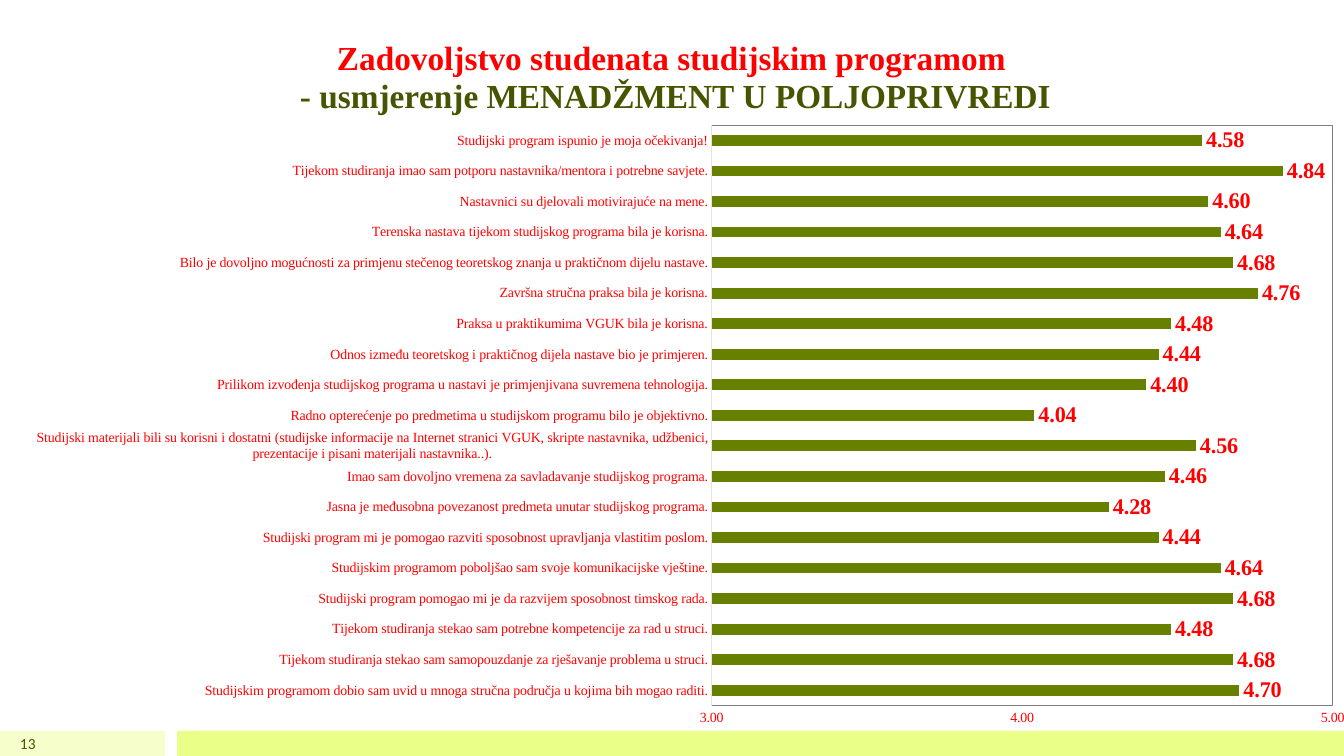
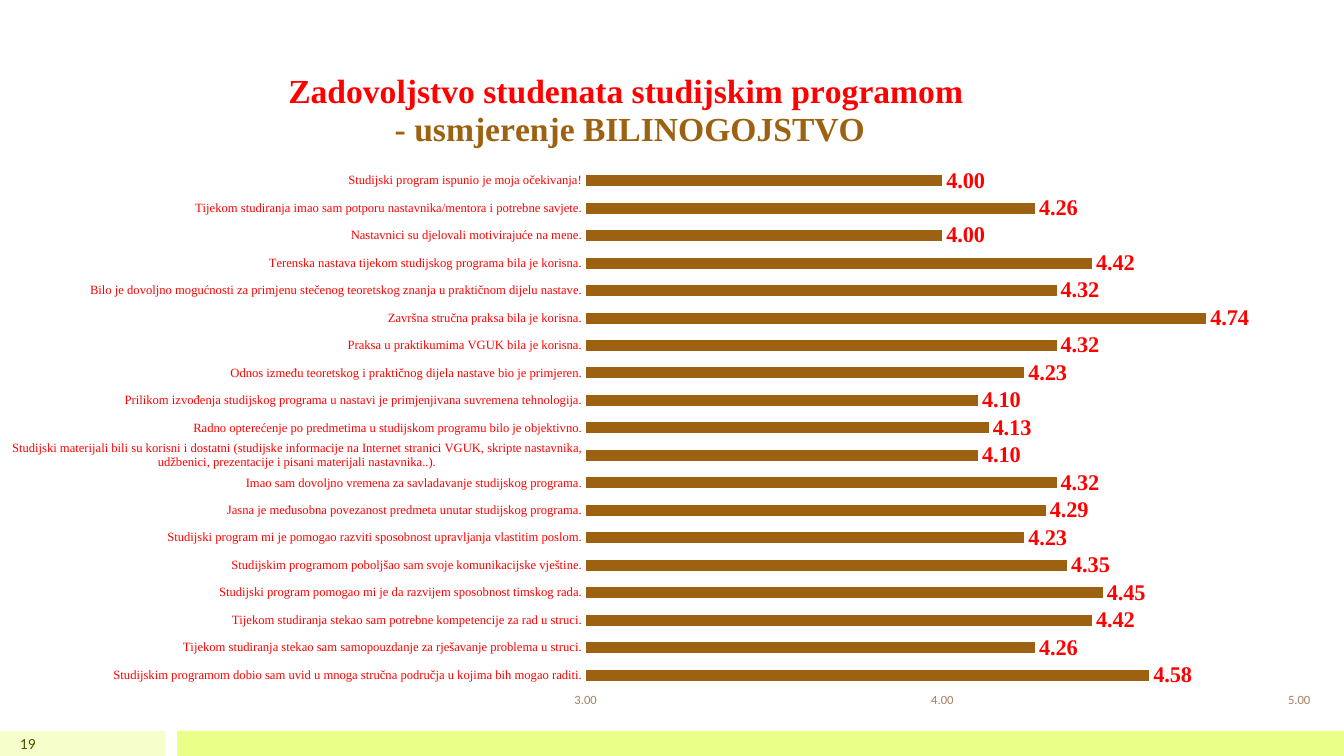
from lxml import etree
from pptx import Presentation
from pptx.chart.data import CategoryChartData
from pptx.dml.color import RGBColor
from pptx.enum.chart import XL_CHART_TYPE, XL_LABEL_POSITION, XL_TICK_MARK
from pptx.enum.shapes import MSO_SHAPE
from pptx.enum.text import MSO_ANCHOR, PP_ALIGN
from pptx.oxml import parse_xml
from pptx.oxml.ns import qn
from pptx.util import Pt

BAR = XL_CHART_TYPE.BAR_CLUSTERED
OUTSIDE_END = XL_LABEL_POSITION.OUTSIDE_END
NO_TICK = XL_TICK_MARK.NONE
RECT = MSO_SHAPE.RECTANGLE
MIDDLE, RIGHT = MSO_ANCHOR.MIDDLE, PP_ALIGN.RIGHT

# Shared look
SERIF, SANS = "Times New Roman", "Calibri"
RED, DARK_GREEN, OLIVE, BROWN = "FF0000", "455500", "688000", "9D6211"
PALE_LIME, LIME, GREY = "F6FFCC", "E9FF88", "808080"
FOOTER_TOP, FOOTER_HEIGHT = 522, 18
NAMESPACES = (
    'xmlns:c="http://schemas.openxmlformats.org/drawingml/2006/chart" '
    'xmlns:a="http://schemas.openxmlformats.org/drawingml/2006/main"'
)

# Survey statements, from the top of the chart down
STATEMENTS = [
    "Studijski program ispunio je moja očekivanja!",
    "Tijekom studiranja imao sam potporu nastavnika/mentora i potrebne savjete.",
    "Nastavnici su djelovali motivirajuće na mene.",
    "Terenska nastava tijekom studijskog programa bila je korisna.",
    "Bilo je dovoljno mogućnosti za primjenu stečenog teoretskog znanja u praktičnom dijelu nastave.",
    "Završna stručna praksa bila je korisna.",
    "Praksa u praktikumima VGUK bila je korisna.",
    "Odnos između teoretskog i praktičnog dijela nastave bio je primjeren.",
    "Prilikom izvođenja studijskog programa u nastavi je primjenjivana suvremena tehnologija.",
    "Radno opterećenje po predmetima u studijskom programu bilo je objektivno.",
    "Studijski materijali bili su korisni i dostatni (studijske informacije na Internet stranici VGUK, "
    "skripte nastavnika, udžbenici, prezentacije i pisani materijali nastavnika..).",
    "Imao sam dovoljno vremena za savladavanje studijskog programa.",
    "Jasna je međusobna povezanost predmeta unutar studijskog programa.",
    "Studijski program mi je pomogao razviti sposobnost upravljanja vlastitim poslom.",
    "Studijskim programom poboljšao sam svoje komunikacijske vještine.",
    "Studijski program pomogao mi je da razvijem sposobnost timskog rada.",
    "Tijekom studiranja stekao sam potrebne kompetencije za rad u struci.",
    "Tijekom studiranja stekao sam samopouzdanje za rješavanje problema u struci.",
    "Studijskim programom dobio sam uvid u mnoga stručna područja u kojima bih mogao raditi.",
]
MANAGEMENT_SCORES = [4.58, 4.84, 4.60, 4.64, 4.68, 4.76, 4.48, 4.44, 4.40, 4.04,
                     4.56, 4.46, 4.28, 4.44, 4.64, 4.68, 4.48, 4.68, 4.70]
CROP_SCORES = [4.00, 4.26, 4.00, 4.42, 4.32, 4.74, 4.32, 4.23, 4.10, 4.13,
               4.10, 4.32, 4.29, 4.23, 4.35, 4.45, 4.42, 4.26, 4.58]


def rgb(value):
    return RGBColor.from_string(value)


def style_font(font, size, color, name=SERIF, bold=False):
    font.size, font.name, font.bold = Pt(size), name, bold
    font.color.rgb = rgb(color)


def add_band(slide, left, width, color):
    band = slide.shapes.add_shape(RECT, Pt(left), Pt(FOOTER_TOP), Pt(width), Pt(FOOTER_HEIGHT))
    band.shadow.inherit = False
    band.fill.solid()
    band.fill.fore_color.rgb = rgb(color)
    band.line.fill.background()


def add_footer(slide, number):
    add_band(slide, 0, 118, PALE_LIME)
    add_band(slide, 126.5, 833.5, LIME)
    page = slide.shapes.add_textbox(0, Pt(FOOTER_TOP), Pt(32.5), Pt(FOOTER_HEIGHT)).text_frame
    page.word_wrap = True
    page.vertical_anchor = MIDDLE
    page.margin_top = page.margin_bottom = 0
    page.text = str(number)
    page.paragraphs[0].alignment = RIGHT
    style_font(page.paragraphs[0].runs[0].font, 11, DARK_GREEN, SANS)


def place(element, **fractions):
    """Give a plot area or chart title a manual layout, as fractions of the chart."""
    for old in element.findall(qn("c:layout")):
        element.remove(old)
    layout = parse_xml(f"<c:layout {NAMESPACES}><c:manualLayout/></c:layout>")
    manual = layout[0]
    if "w" in fractions:
        etree.SubElement(manual, qn("c:layoutTarget")).set("val", "inner")
    for side in "xy":
        etree.SubElement(manual, qn(f"c:{side}Mode")).set("val", "edge")
    for key, fraction in fractions.items():
        etree.SubElement(manual, qn(f"c:{key}")).set("val", str(fraction))
    text = element.find(qn("c:tx"))
    element.insert(0 if text is None else 1, layout)


def add_title(chart, lines, colors, position):
    chart.has_title = True
    title = chart.chart_title
    title.text_frame.text = "\n".join(lines)
    for paragraph, color in zip(title.text_frame.paragraphs, colors):
        style_font(paragraph.runs[0].font, 24, color, bold=True)
    place(title._element, **position)


def style_axis(axis, size, color, name=SERIF, line=None):
    axis.has_major_gridlines = False
    axis.major_tick_mark = axis.minor_tick_mark = NO_TICK
    style_font(axis.tick_labels.font, size, color, name)
    if line:
        axis.format.line.color.rgb = rgb(line)
        axis.format.line.width = Pt(0.75)
    else:
        axis.format.line.fill.background()


def add_score_chart(slide, box, scores, color, gap, plot_position):
    data = CategoryChartData(number_format="0.00")
    data.categories = STATEMENTS[::-1]
    data.add_series("Series 1", scores[::-1])
    chart = slide.shapes.add_chart(BAR, *map(Pt, box), data).chart
    chart.has_legend = False
    style_font(chart.font, 10, RED)
    space = chart._chartSpace
    space.find(qn("c:chart")).addnext(parse_xml(
        f"<c:spPr {NAMESPACES}><a:noFill/><a:ln><a:noFill/></a:ln></c:spPr>"))
    place(space.find(".//" + qn("c:plotArea")), **plot_position)

    # Bars and their values
    plot = chart.plots[0]
    plot.gap_width = gap
    plot.vary_by_categories = False
    bars = plot.series[0].format
    bars.fill.solid()
    bars.fill.fore_color.rgb = rgb(color)
    plot.has_data_labels = True
    labels = plot.data_labels
    labels.show_value = True
    labels.position = OUTSIDE_END
    labels.number_format, labels.number_format_is_linked = "0.00", False
    style_font(labels.font, 16, RED, bold=True)

    # Score scale
    scale = chart.value_axis
    scale.minimum_scale, scale.maximum_scale, scale.major_unit = 3, 5, 1
    scale.tick_labels.number_format = "0.00"
    scale.tick_labels.number_format_is_linked = False
    return chart


def frame_plot(chart):
    chart._chartSpace.find(".//" + qn("c:plotArea")).append(parse_xml(
        f'<c:spPr {NAMESPACES}><a:solidFill><a:srgbClr val="FFFFFF"/></a:solidFill>'
        f'<a:ln w="9525"><a:solidFill><a:srgbClr val="{GREY}"/></a:solidFill></a:ln></c:spPr>'))


def add_management_slide(prs):
    slide = prs.slides.add_slide(prs.slide_layouts[6])
    add_footer(slide, 13)
    chart = add_score_chart(slide, (8, 9.5, 952.5, 512.5), MANAGEMENT_SCORES, OLIVE, 182,
                            dict(x=0.544, y=0.156, w=0.47, h=0.809))
    add_title(chart, ["Zadovoljstvo studenata studijskim programom",
                      " - usmjerenje MENADŽMENT U POLJOPRIVREDI"],
              (RED, DARK_GREEN), dict(x=0.21, y=0.03))
    style_axis(chart.category_axis, 10, RED, line="E9E2DB")
    style_axis(chart.value_axis, 10, RED)
    frame_plot(chart)


def add_crop_slide(prs):
    slide = prs.slides.add_slide(prs.slide_layouts[6])
    add_footer(slide, 19)
    chart = add_score_chart(slide, (7, 39, 937, 492.5), CROP_SCORES, BROWN, 150,
                            dict(x=0.439, y=0.163, w=0.544, h=0.757))
    add_title(chart, ["Zadovoljstvo studenata studijskim programom ",
                      "- usmjerenje BILINOGOJSTVO"],
              (RED, BROWN), dict(x=0.21, y=0.02))
    style_axis(chart.category_axis, 9, RED)
    style_axis(chart.value_axis, 9, "A08263", SANS)


def main():
    prs = Presentation()
    prs.slide_width, prs.slide_height = Pt(960), Pt(540)
    add_management_slide(prs)
    add_crop_slide(prs)
    prs.save("out.pptx")


if __name__ == "__main__":
    main()
